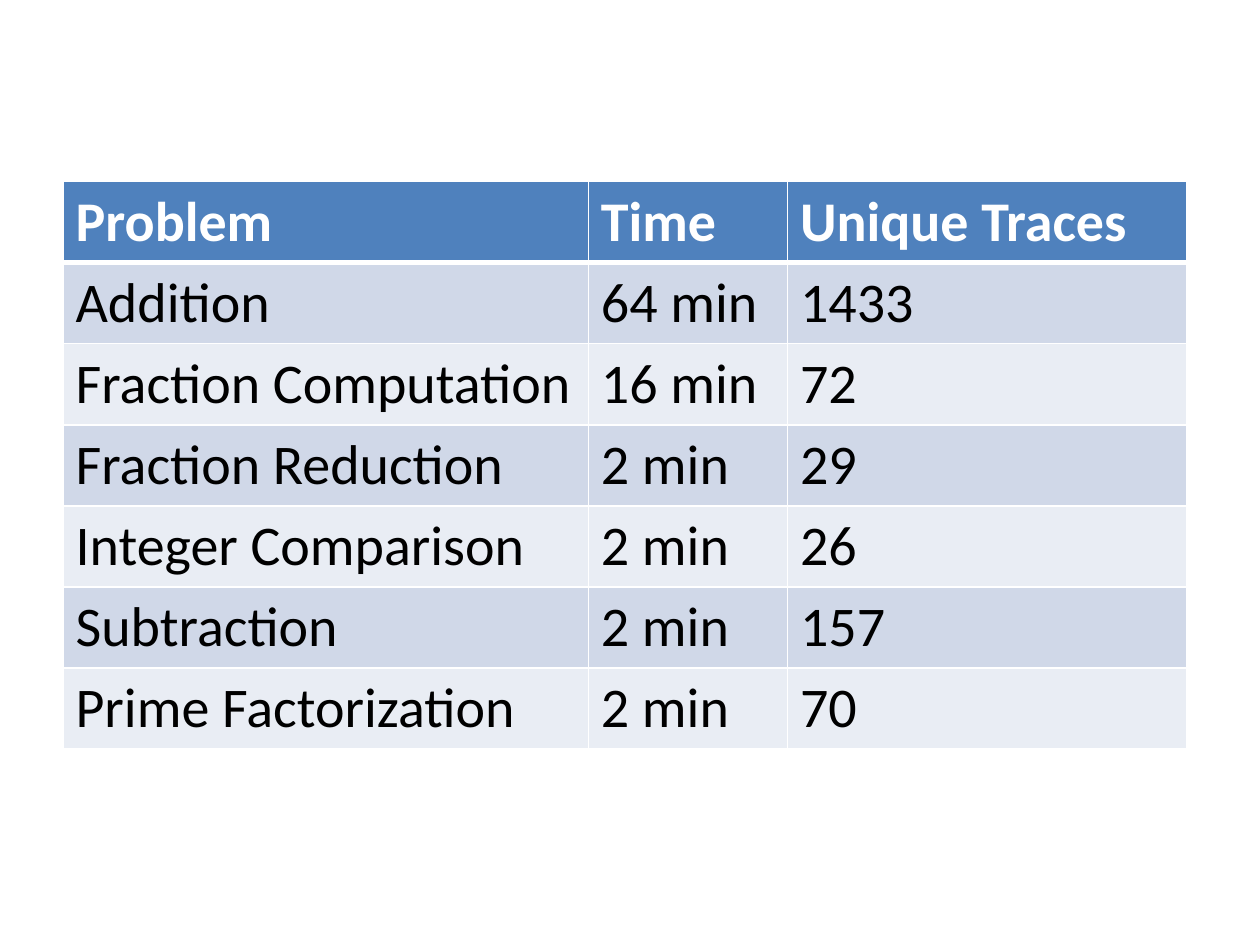
from dataclasses import dataclass

from lxml import etree
from pptx import Presentation
from pptx.dml.color import RGBColor
from pptx.oxml.ns import qn
from pptx.util import Inches, Pt

BLANK_LAYOUT = 6
COLUMN_WIDTHS = (4.17, 1.58, 3.17)
ROW_HEIGHT = 0.64
RESULTS = (
    ("Problem", "Time", "Unique Traces"),
    ("Addition", "64 min", "1433"),
    ("Fraction Computation", "16 min", "72"),
    ("Fraction Reduction", "2 min", "29"),
    ("Integer Comparison", "2 min", "26"),
    ("Subtraction", "2 min", "157"),
    ("Prime Factorization", "2 min", "70"),
)


@dataclass(frozen=True)
class Theme:
    """Colours, font and sizes of the slide."""
    font: str = "Calibri"
    size: int = 32
    header: str = "4F81BD"
    bands: tuple = ("E9EDF4", "D0D8E8")
    header_text: str = "FFFFFF"
    body_text: str = "000000"
    rule: str = "FFFFFF"
    rule_width: int = 1
    header_rule_width: int = 3


THEME = Theme()


def write_text(frame, text, *, color, bold=False, size=THEME.size):
    """Write one formatted run into a text frame."""
    run = frame.paragraphs[0].add_run()
    run.text = text
    run.font.name = THEME.font
    run.font.size = Pt(size)
    run.font.bold = bold
    run.font.color.rgb = RGBColor.from_string(color)


def add_rules(cell, **widths):
    """Draw the cell borders, given a width in points for each side."""
    properties = cell._tc.get_or_add_tcPr()
    for side, width in widths.items():
        rule = etree.SubElement(properties, qn(f"a:ln{side}"), w=str(Pt(width)))
        fill = etree.SubElement(rule, qn("a:solidFill"))
        etree.SubElement(fill, qn("a:srgbClr"), val=THEME.rule)


def format_cell(cell, text, row):
    """Fill, rule and write one cell according to its row."""
    is_header = row == 0
    thin, thick = THEME.rule_width, THEME.header_rule_width
    add_rules(cell, L=thin, R=thin, T=thick if row == 1 else thin,
              B=thick if is_header else thin)
    cell.fill.solid()
    fill_color = THEME.header if is_header else THEME.bands[row % 2]
    cell.fill.fore_color.rgb = RGBColor.from_string(fill_color)
    text_color = THEME.header_text if is_header else THEME.body_text
    write_text(cell.text_frame, text, color=text_color, bold=is_header)


def add_results_table(slide, left, top):
    """Add the table of problems, times and unique traces."""
    table = slide.shapes.add_table(
        len(RESULTS), len(COLUMN_WIDTHS), Inches(left), Inches(top),
        Inches(sum(COLUMN_WIDTHS)), Inches(ROW_HEIGHT * len(RESULTS))).table
    for column, width in zip(table.columns, COLUMN_WIDTHS):
        column.width = Inches(width)
    for row, entries in enumerate(RESULTS):
        table.rows[row].height = Inches(ROW_HEIGHT)
        for column, entry in enumerate(entries):
            format_cell(table.cell(row, column), entry, row)


def main():
    """Build and save the slide."""
    presentation = Presentation()
    presentation.slide_width = Inches(10)
    presentation.slide_height = Inches(7.5)
    slide = presentation.slides.add_slide(presentation.slide_layouts[BLANK_LAYOUT])
    add_results_table(slide, 0.5, 1.44)
    presentation.save("out.pptx")


if __name__ == "__main__":
    main()
